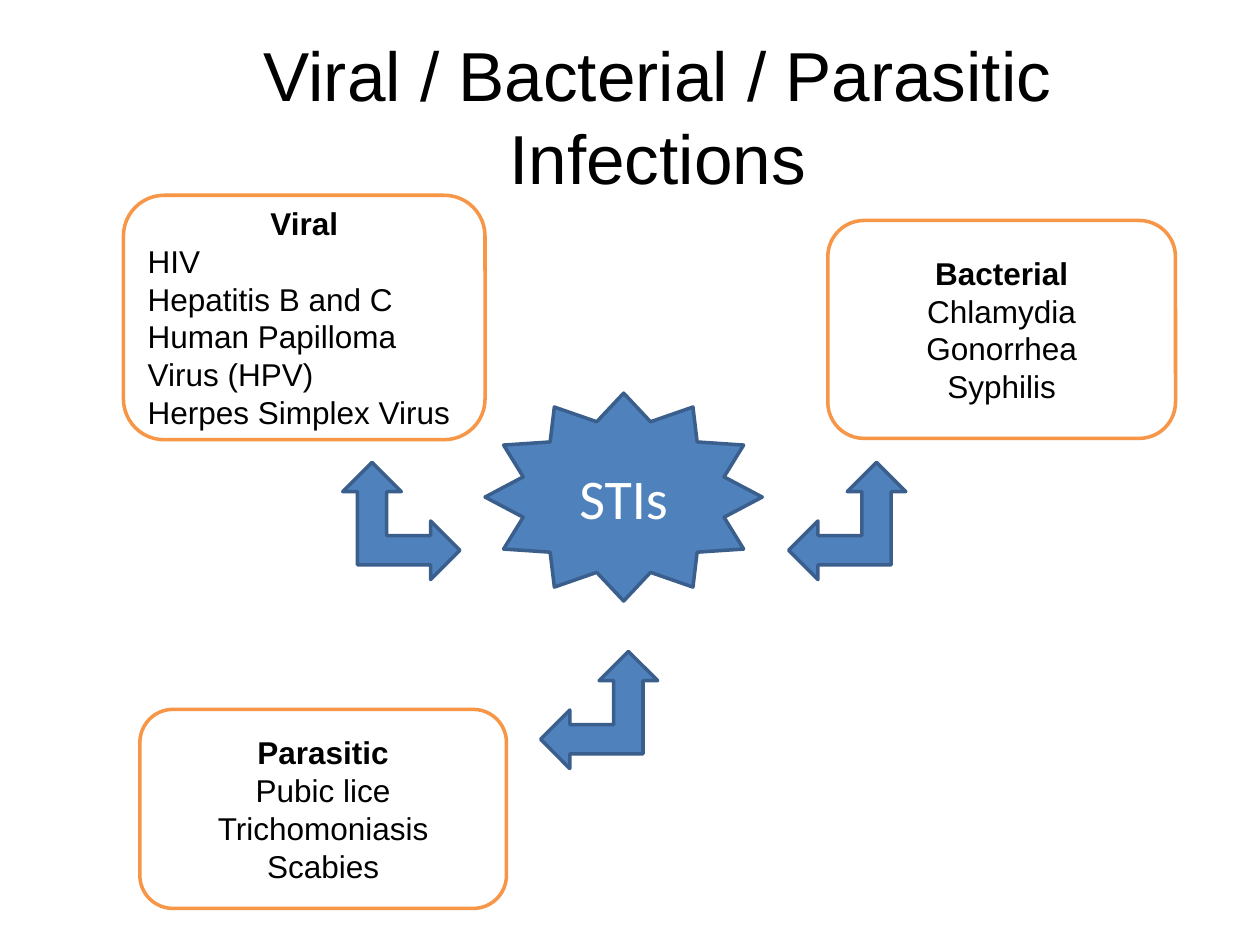
from typing import NamedTuple
from lxml.etree import SubElement
from pptx import Presentation
from pptx.dml.color import RGBColor
from pptx.enum.shapes import MSO_SHAPE
from pptx.enum.text import MSO_ANCHOR, MSO_AUTO_SIZE, PP_ALIGN
from pptx.oxml.ns import qn
from pptx.util import Inches, Pt

BLUE, NAVY, ORANGE = "4F81BD", "3A5F8C", "F79646"
WHITE, BLACK = "FFFFFF", "000000"


class Card(NamedTuple):
    place: tuple
    head: str
    items: list
    align: PP_ALIGN = PP_ALIGN.CENTER


class Arrow(NamedTuple):
    left: float
    top: float
    turn: int = 0


CARDS = [
    Card((0.98, 1.55, 2.87, 1.94), "Viral",
         ["HIV", "Hepatitis B and C", "Human Papilloma Virus (HPV)",
          "Herpes Simplex Virus"], PP_ALIGN.LEFT),
    Card((6.57, 1.75, 2.76, 1.73), "Bacterial",
         ["Chlamydia", "Gonorrhea", "Syphilis"]),
    Card((1.11, 5.63, 2.91, 1.58), "Parasitic",
         ["Pubic lice", "Trichomoniasis", "Scabies"]),
]
ARROWS = [Arrow(6.26, 3.67), Arrow(2.72, 3.67, 90), Arrow(4.29, 5.17)]


def color(code: str) -> RGBColor:
    return RGBColor.from_string(code)


def write(para, text: str, size=18, font="Arial", ink=BLACK, bold=False,
          align=PP_ALIGN.CENTER) -> None:
    para.text = text
    para.alignment = align
    for run in para.runs:
        run.font.size = Pt(size)
        run.font.name = font
        run.font.bold = bold
        run.font.color.rgb = color(ink)


def draw(slide, kind: MSO_SHAPE, place: tuple, fill=BLUE, line=NAVY):
    shape = slide.shapes.add_shape(kind, *map(Inches, place))
    shape.shadow.inherit = False
    shape.fill.solid()
    shape.fill.fore_color.rgb = color(fill)
    shape.line.color.rgb = color(line)
    shape.line.width = Pt(2)
    shape.text_frame.word_wrap = True
    shape.text_frame.vertical_anchor = MSO_ANCHOR.MIDDLE
    return shape


def draw_card(slide, card: Card) -> None:
    frame = draw(slide, MSO_SHAPE.ROUNDED_RECTANGLE, card.place,
                 WHITE, ORANGE).text_frame
    write(frame.paragraphs[0], card.head, bold=True)
    for item in card.items:
        write(frame.add_paragraph(), item, align=card.align)


def main() -> None:
    deck = Presentation()
    deck.slide_width, deck.slide_height = Inches(10), Inches(7.5)
    slide = deck.slides.add_slide(deck.slide_layouts[5])

    # Title
    title = slide.shapes.title
    title.left, title.top = Inches(0.72), Inches(0.29)
    title.width, title.height = Inches(9), Inches(1.25)
    frame = title.text_frame
    frame.auto_size = MSO_AUTO_SIZE.NONE
    frame.vertical_anchor = MSO_ANCHOR.MIDDLE
    para = frame.paragraphs[0]
    write(para, "Viral / Bacterial / Parasitic\vInfections", size=39.6)
    # The line break takes the title's size too
    for gap in para._p.findall(qn("a:br")):
        SubElement(gap, qn("a:rPr"), sz="3960")

    # Central star
    star = draw(slide, MSO_SHAPE.STAR_12_POINT, (3.85, 3.12, 2.2, 1.65))
    write(star.text_frame.paragraphs[0], "STIs", size=32, font="Calibri",
          ink=WHITE)

    # Arrows between the star and the cards
    for arrow in ARROWS:
        shape = draw(slide, MSO_SHAPE.LEFT_UP_ARROW,
                     (arrow.left, arrow.top, 0.93, 0.93))
        shape.rotation = arrow.turn

    # Infection cards
    for card in CARDS:
        draw_card(slide, card)

    deck.save("out.pptx")


if __name__ == "__main__":
    main()
